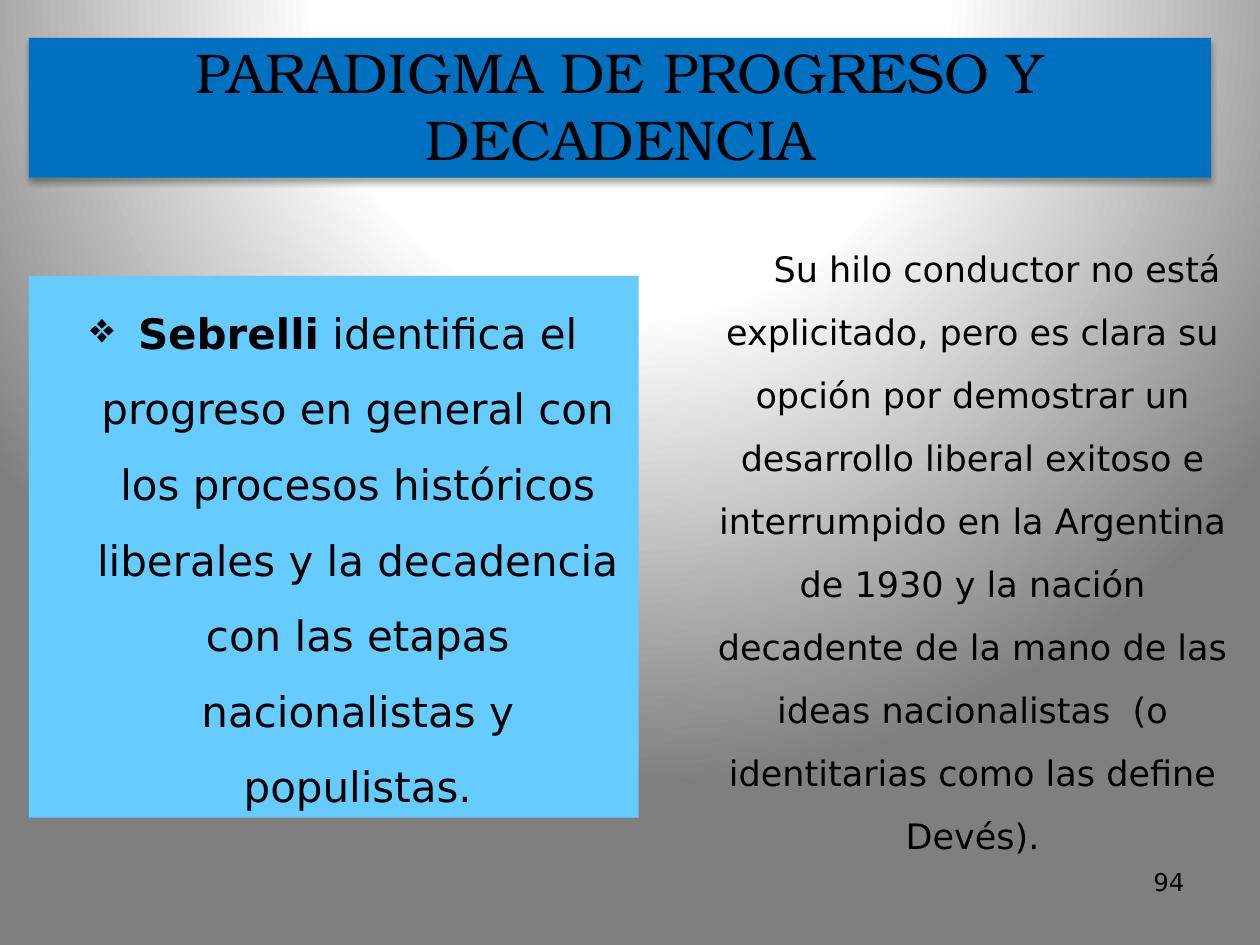
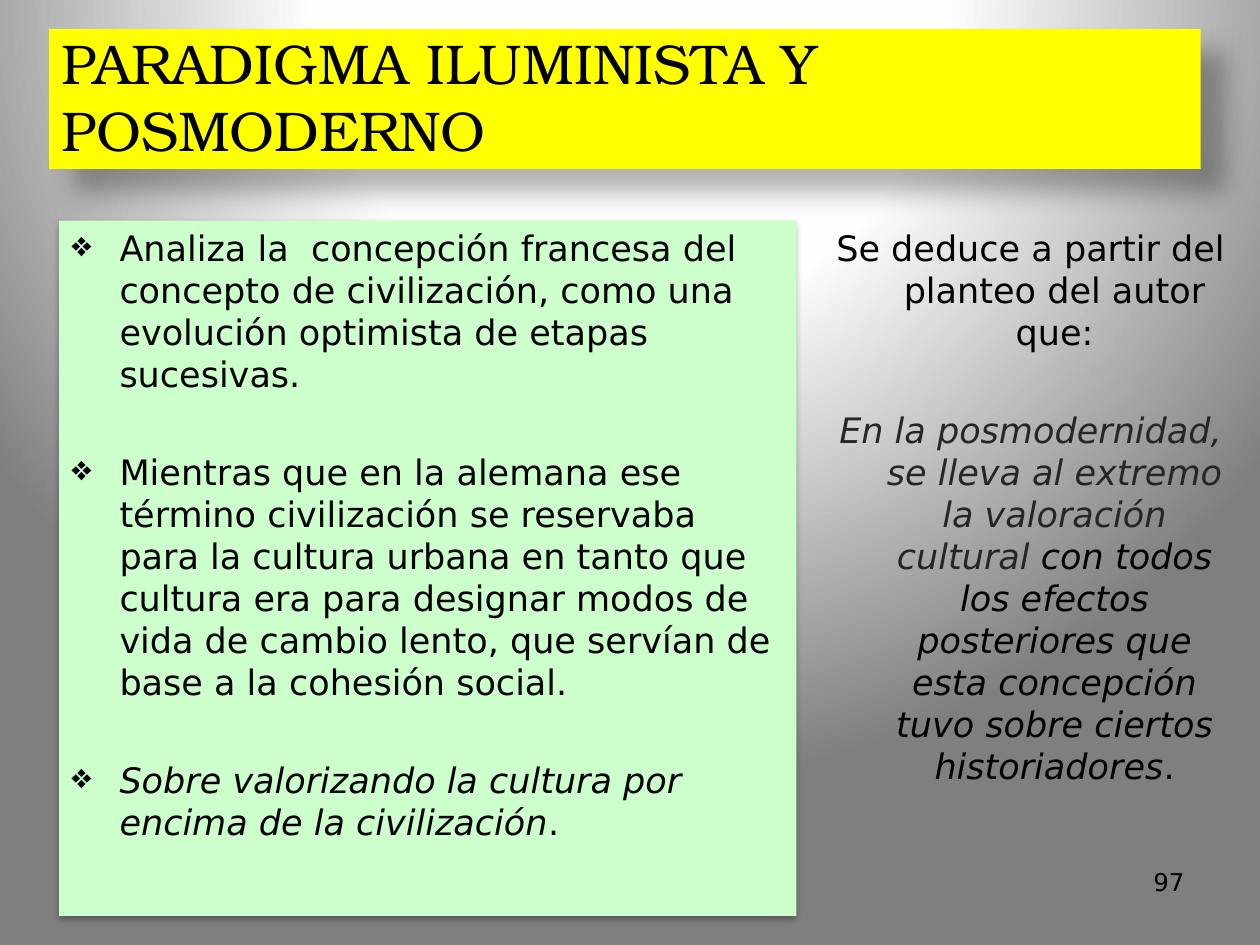
from lxml import etree
from pptx import Presentation
from pptx.dml.color import RGBColor
from pptx.enum.shapes import MSO_SHAPE
from pptx.enum.text import MSO_ANCHOR, PP_ALIGN
from pptx.oxml import parse_xml
from pptx.oxml.ns import nsdecls, qn
from pptx.util import Inches, Pt

RECTANGLE = MSO_SHAPE.RECTANGLE
TOP, BOTTOM = MSO_ANCHOR.TOP, MSO_ANCHOR.BOTTOM
LEFT, CENTER, RIGHT = PP_ALIGN.LEFT, PP_ALIGN.CENTER, PP_ALIGN.RIGHT

BLACK = RGBColor(0x00, 0x00, 0x00)
CHARCOAL = RGBColor(0x26, 0x26, 0x26)
BLUE = RGBColor(0x00, 0x70, 0xC0)
SKY = RGBColor(0x66, 0xCC, 0xFF)
YELLOW = RGBColor(0xFF, 0xFF, 0x00)
MINT = RGBColor(0xCC, 0xFF, 0xCC)
GRADIENT = [(0, RGBColor(0xFF, 0xFF, 0xFF)), (40, RGBColor(0xFE, 0xFE, 0xFE)),
            (100, RGBColor(0x7F, 0x7F, 0x7F))]

TITLE_FONT = "TeX Gyre Bonum"
BODY_FONT = "DejaVu Sans"
HANGING = (0.38, -0.38)
PARAGRAPH_GAP = 4
SECTION_GAP = 32
SOFT_SHADOW = (32, 3.5, 2.2, 90)
DEEP_SHADOW = (30, 15, 18, 45)


class Deck:
    def __init__(self):
        self.presentation = Presentation()
        self.presentation.slide_width = Inches(10)
        self.presentation.slide_height = Inches(7.5)
        self.slide = None

    def add_slide(self, number):
        self.slide = self.presentation.slides.add_slide(self.presentation.slide_layouts[6])
        self.paint_background()
        self.text([7.17, 6.83, 2.33, 0.52], [[(str(number), {})]], size=14, align=RIGHT, gap=0)

    def paint_background(self):
        stops = "".join(f'<a:gs pos="{position * 1000}"><a:srgbClr val="{color}"/></a:gs>'
                        for position, color in GRADIENT)
        background = parse_xml(
            f'<p:bg {nsdecls("p", "a")}><p:bgPr><a:gradFill rotWithShape="1">'
            f'<a:gsLst>{stops}</a:gsLst><a:path path="circle">'
            '<a:fillToRect l="50000" t="-80000" r="50000" b="180000"/></a:path>'
            '</a:gradFill><a:effectLst/></p:bgPr></p:bg>')
        self.slide.element.cSld.insert(0, background)

    def panel(self, box, color, shadow=None):
        shape = self.slide.shapes.add_shape(RECTANGLE, *map(Inches, box))
        shape.fill.solid()
        shape.fill.fore_color.rgb = color
        shape.line.fill.background()
        shape.shadow.inherit = False
        if shadow:
            self.cast_shadow(shape, *shadow)
        return shape

    def cast_shadow(self, shape, opacity, blur, distance, angle):
        effects = shape.element.spPr.find(qn("a:effectLst"))
        effects.append(parse_xml(
            f'<a:outerShdw {nsdecls("a")} blurRad="{Pt(blur)}" dist="{Pt(distance)}" '
            f'dir="{angle * 60000}" rotWithShape="0"><a:srgbClr val="{BLACK}">'
            f'<a:alpha val="{opacity * 1000}"/></a:srgbClr></a:outerShdw>'))

    def title(self, box, text, color, shadow, align):
        self.fill_text(self.panel(box, color, shadow), [[(text, {})]], size=32,
                       font=TITLE_FONT, align=align, anchor=BOTTOM, gap=0)

    def text(self, box, paragraphs, **style):
        self.fill_text(self.slide.shapes.add_textbox(*map(Inches, box)), paragraphs, **style)

    def fill_text(self, shape, paragraphs, size=20, font=BODY_FONT, align=LEFT, anchor=TOP,
                  indent=(0, 0), line_spacing=None, gap=PARAGRAPH_GAP, bullet=False):
        frame = shape.text_frame
        frame.word_wrap = True
        frame.vertical_anchor = anchor
        for index, runs in enumerate(paragraphs):
            paragraph = frame.add_paragraph() if index else frame.paragraphs[0]
            paragraph.alignment = align
            paragraph.space_before = Pt(SECTION_GAP if index else gap)
            if line_spacing:
                paragraph.line_spacing = line_spacing
            self.indent(paragraph, *indent, bullet)
            for text, look in runs:
                run = paragraph.add_run()
                run.text = text
                run.font.name = font
                run.font.size = Pt(size)
                run.font.bold = look.get("bold", False)
                run.font.italic = look.get("italic", False)
                run.font.color.rgb = look.get("color", BLACK)

    def indent(self, paragraph, margin, first_line, bullet):
        properties = paragraph._p.get_or_add_pPr()
        properties.set("marL", str(Inches(margin)))
        properties.set("indent", str(Inches(first_line)))
        if bullet:
            color = etree.SubElement(properties, qn("a:buClr"))
            etree.SubElement(color, qn("a:srgbClr"), val=str(BLACK))
            etree.SubElement(properties, qn("a:buChar"), char="❖")


def add_progress_slide(deck):
    deck.add_slide(94)
    deck.title([0.23, 0.3, 9.38, 1.11], "PARADIGMA DE PROGRESO Y DECADENCIA",
               BLUE, SOFT_SHADOW, CENTER)
    thesis = [("Sebrelli", {"bold": True}),
              (" identifica el progreso en general con los procesos históricos liberales "
               "y la decadencia con las etapas nacionalistas y populistas.", {})]
    deck.fill_text(deck.panel([0.23, 2.19, 4.84, 4.3], SKY), [thesis], size=24, align=CENTER,
                   indent=HANGING, line_spacing=1.5, bullet=True)
    thread = ("Su hilo conductor no está explicitado, pero es clara su opción por demostrar "
              "un desarrollo liberal exitoso e interrumpido en la Argentina de 1930 y la "
              "nación decadente de la mano de las ideas nacionalistas  (o identitarias como "
              "las define Devés).")
    deck.text([5.47, 1.75, 4.4, 5.75], [[(thread, {})]], align=CENTER,
              indent=(0.1, 0.39), line_spacing=1.5)


def add_enlightenment_slide(deck):
    italic = {"italic": True}
    deck.add_slide(97)
    deck.title([0.39, 0.23, 9.14, 1.11], "PARADIGMA ILUMINISTA Y POSMODERNO",
               YELLOW, DEEP_SHADOW, LEFT)
    concepts = [
        [("Analiza la  concepción francesa del concepto de civilización, como una "
          "evolución optimista de etapas sucesivas.", {})],
        [("Mientras que en la alemana ese término civilización se reservaba para la "
          "cultura urbana en tanto que cultura era para designar modos de vida de cambio "
          "lento, que servían de base a la cohesión social.", {})],
        [("Sobre valorizando la cultura por encima de la civilización", italic), (".", {})],
    ]
    deck.fill_text(deck.panel([0.47, 1.75, 5.85, 5.52], MINT, SOFT_SHADOW), concepts,
                   indent=HANGING, bullet=True)
    deduction = [
        [("Se deduce a partir del planteo del autor que:", {})],
        [("En la posmodernidad, se lleva al extremo la valoración cultural ",
          {"italic": True, "color": CHARCOAL}),
         ("con todos los efectos posteriores que esta concepción tuvo sobre ciertos "
          "historiadores", italic), (".", {})],
    ]
    deck.text([6.49, 1.75, 3.38, 4.95], deduction, align=CENTER, indent=HANGING)


def main():
    deck = Deck()
    add_progress_slide(deck)
    add_enlightenment_slide(deck)
    deck.presentation.save("out.pptx")


if __name__ == "__main__":
    main()
